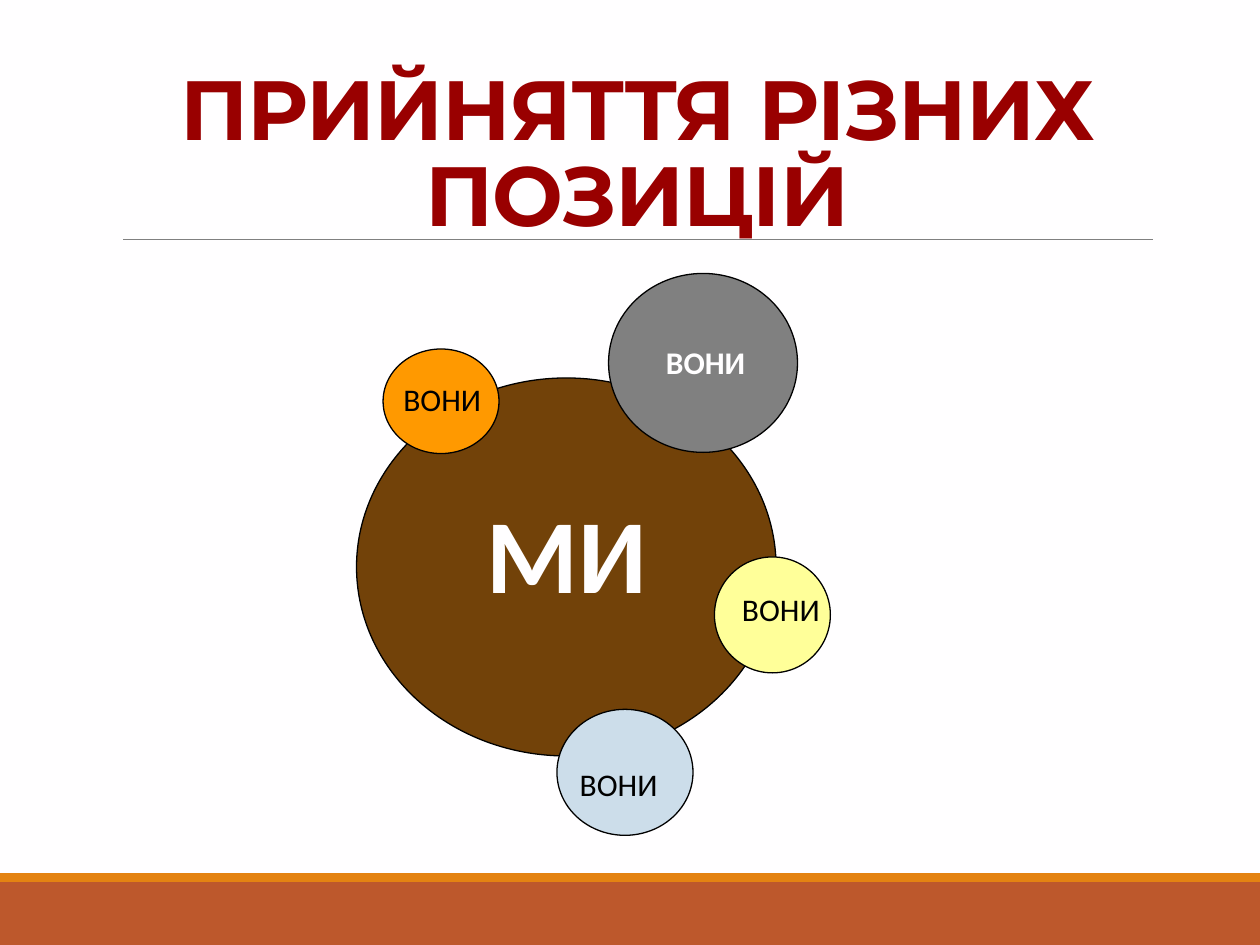
from dataclasses import dataclass

from lxml import etree
from pptx import Presentation
from pptx import util as u
from pptx.dml.color import RGBColor
from pptx.enum import shapes, text
from pptx.oxml import ns

Inches, Pt = u.Inches, u.Pt


@dataclass(frozen=True)
class Theme:
    paper: str = "FFFEFF"
    ink: str = "000000"
    red: str = "990000"
    rust: str = "BD582C"
    amber: str = "E48312"
    brown: str = "724209"
    gray: str = "808080"
    orange: str = "FF9900"
    yellow: str = "FFFF99"
    blue: str = "CCDDEA"
    head: str = "Montserrat"
    body: str = "Calibri"
    title: int = 48
    big: int = 60
    small: int = 18


T = Theme()
deck = Presentation()
deck.slide_width, deck.slide_height = Inches(10), Inches(7.5)
slide = deck.slides.add_slide(deck.slide_layouts[6])
slide.background.fill.solid()
slide.background.fill.fore_color.rgb = RGBColor.from_string(T.paper)


def add_form(kind, box, fill, line=None):
    form = slide.shapes.add_shape(kind, *map(Inches, box))
    form.shadow.inherit = False
    form.fill.solid()
    form.fill.fore_color.rgb = RGBColor.from_string(fill)
    if line:
        form.line.color.rgb = RGBColor.from_string(line)
        form.line.width = Pt(0.75)
    else:
        form.line.fill.background()


def add_text(words, box, size=T.small, color=T.ink, font=T.body, bold=False,
             align=text.PP_ALIGN.CENTER, anchor=text.MSO_ANCHOR.TOP,
             fit=text.MSO_AUTO_SIZE.SHAPE_TO_FIT_TEXT, lead=1.0, track=0):
    frame = slide.shapes.add_textbox(*map(Inches, box)).text_frame
    frame.word_wrap = True
    frame.auto_size = fit
    frame.vertical_anchor = anchor
    para = frame.paragraphs[0]
    para.alignment = align
    para.line_spacing = lead
    run = para.add_run()
    run.text = words
    run.font.name, run.font.size, run.font.bold = font, Pt(size), bold
    run.font.color.rgb = RGBColor.from_string(color)
    if track:
        run.font._element.set("spc", str(int(track * 100)))


# Footer bands
add_form(shapes.MSO_SHAPE.RECTANGLE, (0, 7, 10, 0.5), T.rust)
add_form(shapes.MSO_SHAPE.RECTANGLE, (0, 6.93, 10, 0.07), T.amber)

# Rule under the title
rule = slide.shapes.add_connector(
    shapes.MSO_CONNECTOR.STRAIGHT,
    Inches(0.98), Inches(1.9), Inches(9.15), Inches(1.9))
rule.line.color.rgb = RGBColor.from_string(T.gray)
rule.line.width = Pt(0.5)
etree.SubElement(rule._element.spPr, ns.qn("a:effectLst"))

# Title
add_text("ПРИЙНЯТТЯ РІЗНИХ ПОЗИЦІЙ", (0.56, 0.73, 9, 1.25), size=T.title,
         color=T.red, font=T.head, bold=True, anchor=text.MSO_ANCHOR.BOTTOM,
         fit=text.MSO_AUTO_SIZE.NONE, lead=0.85, track=-0.5)

# Large circle and the circles around it
for box, fill in [
    ((2.83, 3, 3.33, 3), T.brown),
    ((4.83, 2.17, 1.5, 1.42), T.gray),
    ((3.04, 2.77, 0.92, 0.83), T.orange),
    ((5.67, 4.42, 0.92, 0.92), T.yellow),
    ((4.42, 5.63, 1.08, 1), T.blue),
]:
    add_form(shapes.MSO_SHAPE.OVAL, box, fill, line=T.ink)

# Labels
add_text("МИ", (3.5, 3.83, 2, 1.11), size=T.big, color=T.paper, bold=True)
for left, top, style in [
    (2.97, 2.97, {}),
    (5.06, 2.67, {"color": T.paper, "bold": True}),
    (5.79, 4.63, {"align": text.PP_ALIGN.LEFT}),
    (4.37, 6.02, {}),
]:
    add_text("ВОНИ", (left, top, 1.08, 0.4), **style)

deck.save("out.pptx")
